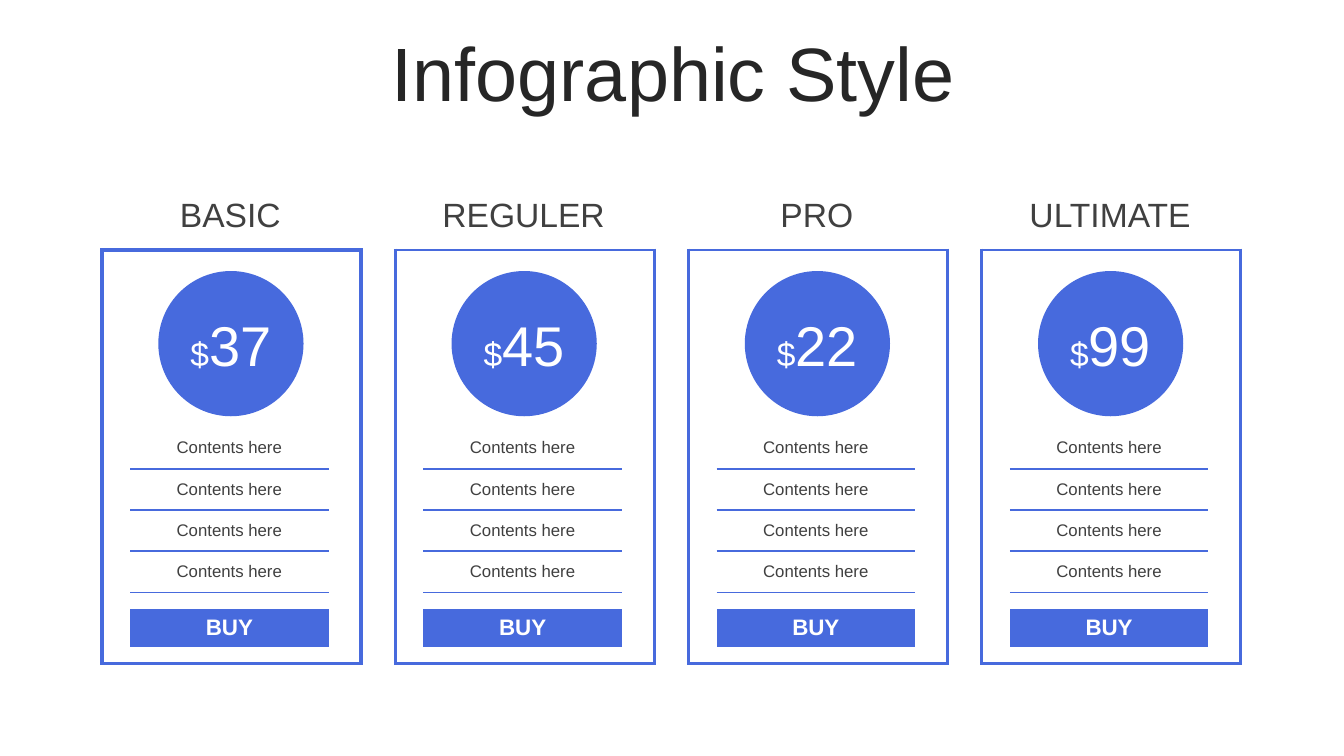
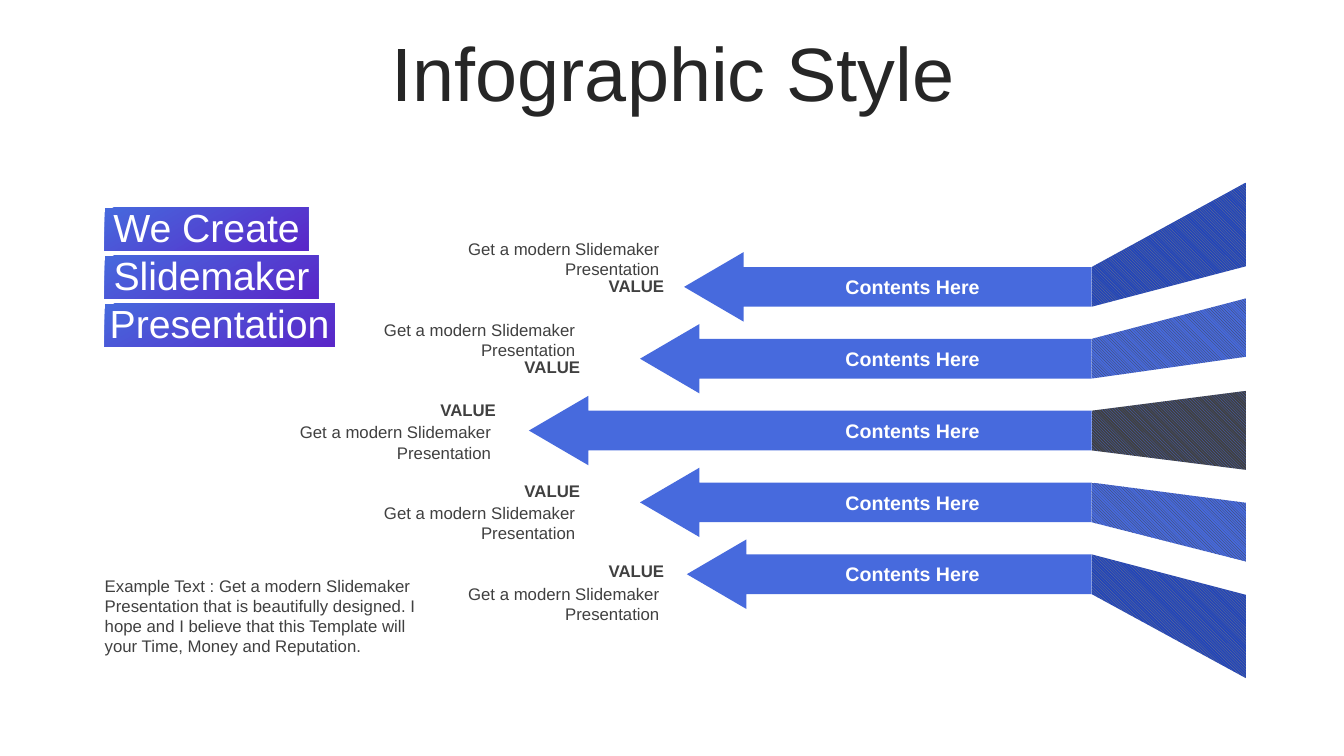
from lxml import etree
from pptx import Presentation
from pptx.dml.color import RGBColor
from pptx.enum.dml import MSO_PATTERN
from pptx.enum.shapes import MSO_SHAPE
from pptx.enum.text import MSO_ANCHOR, MSO_AUTO_SIZE, PP_ALIGN
from pptx.oxml.ns import qn
from pptx.util import Cm, Pt

LEFT, CENTER, RIGHT = PP_ALIGN.LEFT, PP_ALIGN.CENTER, PP_ALIGN.RIGHT
TOP, MIDDLE = MSO_ANCHOR.TOP, MSO_ANCHOR.MIDDLE
RECTANGLE, OVAL, LEFT_ARROW = MSO_SHAPE.RECTANGLE, MSO_SHAPE.OVAL, MSO_SHAPE.LEFT_ARROW
DIAGONAL = MSO_PATTERN.DARK_DOWNWARD_DIAGONAL
NO_AUTOFIT = MSO_AUTO_SIZE.NONE

FONT = "Arial"
COLORS = {
    "title": "262626",
    "text": "404040",
    "white": "FFFFFF",
    "blue": "476ADD",
    "deep": "2245B9",
    "gray": "808080",
    "gradient_start": "4669DD",
    "gradient_end": "5A26C8",
}
NO_GRID_STYLE = "{2D5ABB26-0587-4C30-8999-92F81FD0307C}"
BORDER_TAGS = ("a:lnL", "a:lnR", "a:lnT", "a:lnB")


def rgb(name):
    return RGBColor.from_string(COLORS[name])


class Deck:
    def __init__(self):
        self.presentation = Presentation()
        self.presentation.slide_width = Cm(33.87)
        self.presentation.slide_height = Cm(19.05)
        self.slide = None

    def add_slide(self, title):
        layout = self.presentation.slide_layouts[5]
        self.slide = self.presentation.slides.add_slide(layout)
        shape = self.slide.shapes.title
        shape.left, shape.top, shape.width, shape.height = Cm(0.89), Cm(0.94), Cm(32.16), Cm(2.01)
        shape.text_frame.auto_size = NO_AUTOFIT
        paragraph = self.fill_text(shape.text_frame, title, 54, "title", CENTER, anchor=MIDDLE)
        paragraph.line_spacing = 0.9
        paragraph.space_before = Pt(10)

    def fill_text(self, frame, text, size, color, align, bold=False, anchor=TOP):
        frame.word_wrap = True
        frame.vertical_anchor = anchor
        paragraph = frame.paragraphs[0]
        paragraph.alignment = align
        self.set_font(paragraph.font, size, color, bold)
        paragraph.add_run().text = text
        return paragraph

    def set_font(self, font, size, color, bold=False):
        font.name = FONT
        font.size = Pt(size)
        font.bold = bold
        font.color.rgb = rgb(color)

    def clear_margins(self, frame):
        frame.margin_left = frame.margin_right = frame.margin_top = frame.margin_bottom = 0

    def text(self, left, top, width, height, text, size=12, color="text", align=LEFT, bold=False):
        box = self.slide.shapes.add_textbox(Cm(left), Cm(top), Cm(width), Cm(height))
        self.clear_margins(box.text_frame)
        self.fill_text(box.text_frame, text, size, color, align, bold)

    def shape(self, kind, left, top, width, height):
        shape = self.slide.shapes.add_shape(kind, Cm(left), Cm(top), Cm(width), Cm(height))
        self.clear_margins(shape.text_frame)
        self.fill_solid(shape)
        return shape

    def fill_solid(self, shape):
        shape.shadow.inherit = False
        shape.line.fill.background()
        shape.fill.solid()
        shape.fill.fore_color.rgb = rgb("blue")

    def price(self, left, top, diameter, amount):
        circle = self.shape(OVAL, left, top, diameter, diameter)
        frame = circle.text_frame
        paragraph = self.fill_text(frame, "$", 24, "white", CENTER, anchor=MIDDLE)
        frame.word_wrap = False
        number = paragraph.add_run()
        number.text = amount
        number.font.size = Pt(40)

    def highlight(self, left, top, width, height, text):
        shape = self.shape(RECTANGLE, left, top, width, height)
        shape.fill.gradient()
        shape.fill.gradient_angle = 300
        for stop, color in zip(shape.fill.gradient_stops, ("gradient_start", "gradient_end")):
            stop.color.rgb = rgb(color)
        paragraph = self.fill_text(shape.text_frame, text, 28, "white", CENTER, anchor=MIDDLE)
        paragraph.line_spacing = Pt(30)

    def arrow(self, tip, end, middle, shaft):
        height, head = 1.75, 1.5
        arrow = self.shape(LEFT_ARROW, tip, middle - height / 2, end - tip, height)
        arrow.adjustments[0] = shaft / height
        arrow.adjustments[1] = head / height

    def ribbon(self, points, foreground, background):
        corners = [(Cm(x), Cm(y)) for x, y in points]
        builder = self.slide.shapes.build_freeform(*corners[0])
        builder.add_line_segments(corners[1:], close=True)
        shape = builder.convert_to_shape()
        self.fill_solid(shape)
        shape.fill.patterned()
        shape.fill.pattern = DIAGONAL
        shape.fill.fore_color.rgb = rgb(foreground)
        shape.fill.back_color.rgb = rgb(background)

    def borders(self, cell, widths):
        properties = cell._tc.get_or_add_tcPr()
        for index, (tag, width) in enumerate(zip(BORDER_TAGS, widths)):
            line = etree.Element(qn(tag), w=str(int(Pt(width))))
            if width:
                fill = etree.SubElement(line, qn("a:solidFill"))
                etree.SubElement(fill, qn("a:srgbClr"), val=COLORS["blue"])
            else:
                etree.SubElement(line, qn("a:noFill"))
            properties.insert(index, line)

    def cell(self, cell, text, is_button):
        cell.margin_left = cell.margin_right = cell.margin_top = cell.margin_bottom = 0
        cell.vertical_anchor = MIDDLE
        cell.fill.background()
        paragraph = cell.text_frame.paragraphs[0]
        paragraph.alignment = CENTER
        if is_button:
            cell.fill.solid()
            cell.fill.fore_color.rgb = rgb("blue")
            self.set_font(paragraph.font, 16, "white", True)
        else:
            self.set_font(paragraph.font, 12 if text else 4, "text")
        if text:
            paragraph.add_run().text = text
        else:
            etree.SubElement(paragraph._p, qn("a:endParaRPr"), sz="400")

    def card(self, left, top, features, button, frame_width):
        columns = [0.71, 5.0, 0.82]
        rows = [4.47] + [1.04] * len(features) + [0.41, 0.97, 0.41]
        last_row, last_column = len(rows) - 1, len(columns) - 1
        texts = [""] + features + ["", button, ""]
        table = self.slide.shapes.add_table(
            len(rows), len(columns), Cm(left), Cm(top), Cm(sum(columns)), Cm(sum(rows))
        ).table
        table.first_row = table.horz_banding = False
        table._tbl.tblPr.find(qn("a:tableStyleId")).text = NO_GRID_STYLE
        for column, width in zip(table.columns, columns):
            column.width = Cm(width)
        for row_index, height in enumerate(rows):
            table.rows[row_index].height = Cm(height)
            for column_index in range(len(columns)):
                is_middle = column_index == 1
                cell = table.cell(row_index, column_index)
                text = texts[row_index] if is_middle else ""
                self.cell(cell, text, is_middle and text == button)
                rule_above = 1.5 * (is_middle and 2 <= row_index <= len(features) + 1)
                rule_below = 1.5 * (is_middle and 1 <= row_index <= len(features))
                self.borders(cell, (
                    frame_width if column_index == 0 else 0,
                    frame_width if column_index == last_column or row_index == 0 else 0,
                    frame_width if row_index == 0 else rule_above,
                    frame_width if row_index == last_row else rule_below,
                ))
        table.cell(0, 0).merge(table.cell(0, last_column))
        for column_index in (0, last_column):
            table.cell(2, column_index).merge(table.cell(len(features), column_index))


def add_pricing_slide(deck):
    deck.add_slide("Infographic Style")
    plans = [("BASIC", "37"), ("REGULER", "45"), ("PRO", "22"), ("ULTIMATE", "99")]
    for index, (name, amount) in enumerate(plans):
        left = 2.57 + 7.39 * index
        deck.text(left + 0.53, 4.88, 5.41, 1.02, name, 24, align=CENTER)
        deck.card(left, 6.3, ["Contents here"] * 4, "BUY", 3 if index == 0 else 2.25)
        deck.price(left + 1.42, 6.83, 3.66, amount)


def add_arrow_slide(deck):
    deck.add_slide("Infographic Style")
    heading = [("We Create", 5.13), ("Slidemaker", 5.38), ("Presentation", 5.79)]
    for index, (text, width) in enumerate(heading):
        deck.highlight(2.64, 5.23 + 1.21 * index, width, 1.09, text)
    deck.text(
        2.64, 14.5, 8.31, 2.06,
        "Example Text : Get a modern Slidemaker Presentation that is beautifully designed. "
        "I hope and I believe that this Template will your Time, Money and Reputation.",
    )

    shaft, arrow_end, ribbon_end = 1.0, 27.51, 31.4
    arrows = [
        (17.24, 4.6, 6.71, "gray", "deep"),
        (16.13, 7.52, 8.99, "text", "blue"),
        (13.33, 9.85, 11.84, "blue", "text"),
        (16.13, 12.67, 14.15, "text", "blue"),
        (17.31, 14.99, 17.09, "gray", "deep"),
    ]
    for index, (tip, ribbon_top, ribbon_bottom, foreground, background) in enumerate(arrows):
        middle = 7.23 + 1.81 * index
        deck.arrow(tip, arrow_end, middle, shaft)
        deck.ribbon(
            [
                (arrow_end, middle - shaft / 2),
                (ribbon_end, ribbon_top),
                (ribbon_end, ribbon_bottom),
                (arrow_end, middle + shaft / 2),
            ],
            foreground, background,
        )
        deck.text(20.7, middle - 0.3, 4.6, 0.61, "Contents Here", 14, "white", CENTER, True)

        caption_left = 7.34 + 2.12 * abs(index - 2)
        caption_top = 6.02 + 2.03 * index
        value_offset, detail_offset = (0.94, 0) if index < 2 else (0, 0.56)
        deck.text(caption_left, caption_top + detail_offset, 5.04, 1.02,
                  "Get a modern Slidemaker Presentation", align=RIGHT)
        deck.text(caption_left, caption_top + value_offset, 5.16, 0.51,
                  "VALUE", align=RIGHT, bold=True)


def main():
    deck = Deck()
    add_pricing_slide(deck)
    add_arrow_slide(deck)
    deck.presentation.save("out.pptx")


if __name__ == "__main__":
    main()
